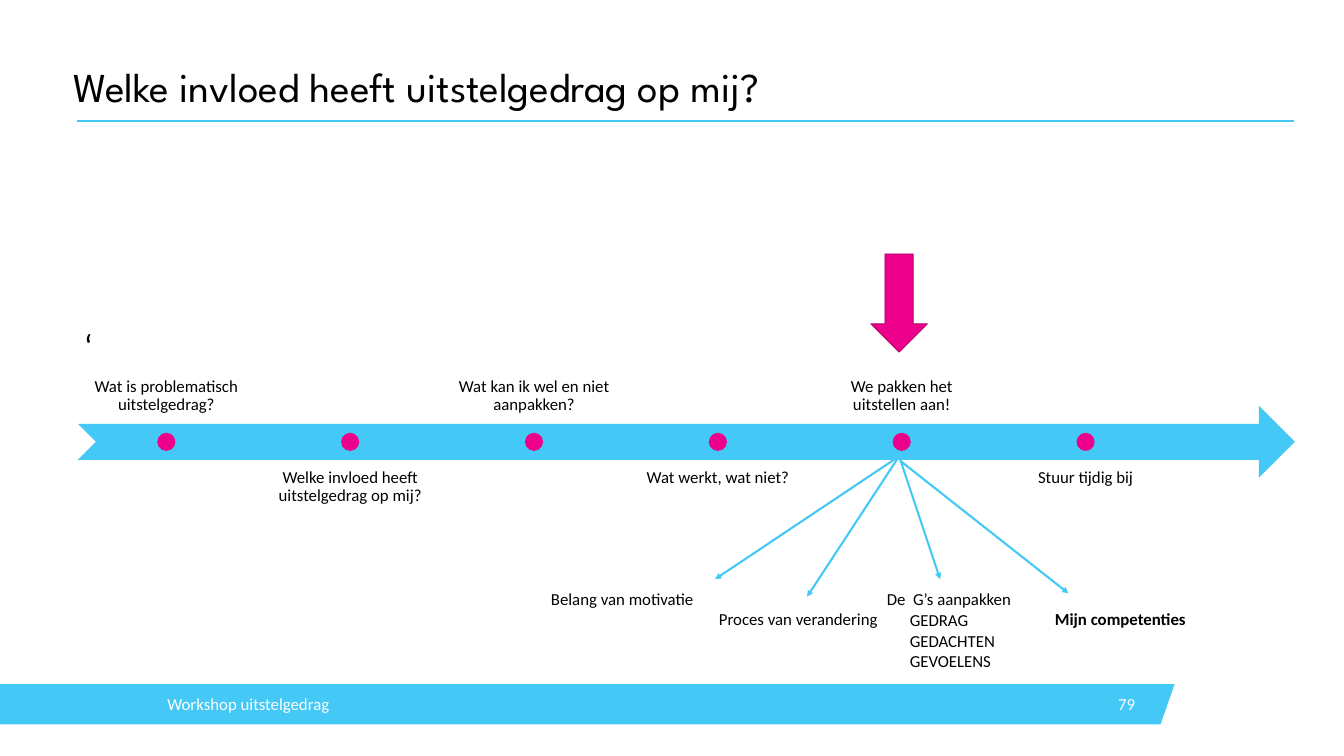
from lxml import etree
from pptx import Presentation
from pptx.dml.color import RGBColor
from pptx.enum.shapes import MSO_CONNECTOR, MSO_SHAPE
from pptx.enum.text import MSO_ANCHOR, MSO_AUTO_SIZE, PP_ALIGN
from pptx.oxml.ns import qn
from pptx.util import Inches, Pt

STRAIGHT = MSO_CONNECTOR.STRAIGHT
TOP, MIDDLE, BOTTOM = MSO_ANCHOR.TOP, MSO_ANCHOR.MIDDLE, MSO_ANCHOR.BOTTOM
LEFT, CENTER, RIGHT = PP_ALIGN.LEFT, PP_ALIGN.CENTER, PP_ALIGN.RIGHT
BLUE, PINK, DARK_PINK = "44C8F5", "EC008C", "AF0068"
BLACK, WHITE = "000000", "FFFFFF"


def color(value):
    return RGBColor.from_string(value)


def fill_text(shape, lines, size=18, ink=BLACK, align=LEFT, anchor=TOP,
              inset=(0.1, 0.05), spacing=None, font="Calibri"):
    frame = shape.text_frame
    frame.word_wrap = True
    frame.auto_size = MSO_AUTO_SIZE.NONE
    frame.vertical_anchor = anchor
    frame.margin_left = frame.margin_right = Inches(inset[0])
    frame.margin_top = frame.margin_bottom = Inches(inset[1])
    frame.text = "\n".join(lines)
    for paragraph in frame.paragraphs:
        paragraph.alignment = align
        paragraph.space_before = Pt(0)
        paragraph.line_spacing = spacing
        paragraph.font.name = font
        paragraph.font.size = Pt(size)
        paragraph.font.color.rgb = color(ink)
    return frame


presentation = Presentation()
presentation.slide_width = Inches(20)
presentation.slide_height = Inches(11.25)
slide = presentation.slides.add_slide(presentation.slide_layouts[1])
shapes = slide.shapes

builder = shapes.build_freeform(Inches(0), Inches(10.18), scale=1.0)
builder.add_line_segments([(Inches(x), Inches(y)) for x, y in
                           [(17.48, 10.18), (17.27, 10.78), (0, 10.78)]])
footer_band = builder.convert_to_shape()
footer_band.shadow.inherit = False
footer_band.fill.solid()
footer_band.fill.fore_color.rgb = color(BLUE)
footer_band.line.fill.background()

title = shapes.title
title.left, title.top, title.width, title.height = map(Inches, (1.09, 0.97, 18.13, 0.69))
fill_text(title, ["Welke invloed heeft uitstelgedrag op mij?"], size=44, anchor=BOTTOM,
          inset=(0, 0), spacing=0.9, font="League Spartan")

body = slide.placeholders[1]
body.left, body.top, body.width, body.height = map(Inches, (1.15, 4.85, 18.13, 4.4))
body_frame = fill_text(body, ["‘"], size=36, spacing=0.9)
body_properties = body_frame.paragraphs[0]._p.get_or_add_pPr()
body_properties.set("marL", "0")
body_properties.set("indent", "0")
bullet_none = etree.Element(qn("a:buNone"))
body_properties.find(qn("a:defRPr")).addprevious(bullet_none)

footer = shapes.add_textbox(Inches(2.49), Inches(10.18), Inches(6.75), Inches(0.6))
fill_text(footer, ["Workshop uitstelgedrag"], ink=WHITE, anchor=MIDDLE, inset=(0, 0))
page_number = shapes.add_textbox(Inches(15.9), Inches(10.18), Inches(1.09), Inches(0.6))
fill_text(page_number, ["79"], ink=WHITE, align=RIGHT, anchor=MIDDLE)

steps = ["Wat is problematisch uitstelgedrag?",
         "Welke invloed heeft uitstelgedrag op mij?",
         "Wat kan ik wel en niet aanpakken?",
         "Wat werkt, wat niet?",
         "We pakken het uitstellen aan!",
         "Stuur tijdig bij"]
step_pitch = 13.68 / 5
markers = [(MSO_SHAPE.NOTCHED_RIGHT_ARROW, 1.16, 6.04, 18.11, 1.07, BLUE, None)]
markers += [(MSO_SHAPE.OVAL, 2.34 + step_pitch * index, 6.44, 0.27, 0.27, PINK, None)
            for index in range(len(steps))]
markers.append((MSO_SHAPE.DOWN_ARROW, 12.96, 3.78, 0.84, 1.46, PINK, DARK_PINK))
for kind, left, top, width, height, fill, outline in markers:
    marker = shapes.add_shape(kind, Inches(left), Inches(top), Inches(width), Inches(height))
    marker.shadow.inherit = False
    marker.fill.solid()
    marker.fill.fore_color.rgb = color(fill)
    if outline:
        marker.line.color.rgb = color(outline)
        marker.line.width = Pt(1)
    else:
        marker.line.fill.background()

for index, step in enumerate(steps):
    above = index % 2 == 0
    label = shapes.add_textbox(Inches(1.17 + step_pitch * index), Inches(5.24 if above else 6.84),
                               Inches(2.61), Inches(1.07))
    fill_text(label, [step], align=CENTER, anchor=BOTTOM if above else TOP,
              inset=(0.14, 0.14), spacing=0.9)

lines = [(1.14, 1.8, 19.25, 1.8, False),
         (13.38, 6.79, 10.64, 8.62, True),
         (13.38, 6.79, 12.01, 8.88, True),
         (13.38, 6.79, 13.99, 8.62, True),
         (13.4, 6.86, 15.9, 8.83, True)]
for start_x, start_y, end_x, end_y, has_arrowhead in lines:
    connector = shapes.add_connector(STRAIGHT, Inches(start_x), Inches(start_y),
                                     Inches(end_x), Inches(end_y))
    connector.line.color.rgb = color(BLUE)
    connector.line.width = Pt(2.25)
    if has_arrowhead:
        etree.SubElement(connector.line._get_or_add_ln(), qn("a:tailEnd"), type="triangle")
    etree.SubElement(connector._element.spPr, qn("a:effectLst"))

topics = shapes.add_textbox(Inches(6.6), Inches(8.71), Inches(11.74), Inches(0.71))
topic_rows = [("Belang van motivatie", "De  G’s aanpakken"),
              ("Proces van verandering", "Mijn competenties")]
topics_frame = fill_text(topics, ["\t" + "\t".join(row) for row in topic_rows])
for paragraph, stops in zip(topics_frame.paragraphs, [(1.5, 6.5), (4, 9)]):
    tab_list = etree.Element(qn("a:tabLst"))
    for stop in stops:
        etree.SubElement(tab_list, qn("a:tab"), pos=str(Inches(stop)), algn="l")
    paragraph._p.pPr.find(qn("a:defRPr")).addprevious(tab_list)
second_row = topics_frame.paragraphs[1]
second_row.runs[0].text = "\tProces van verandering\t"
bold_run = second_row.add_run()
bold_run.text = "Mijn competenties"
bold_run.font.bold = True

g_list = shapes.add_textbox(Inches(13.44), Inches(9.03), Inches(7.7 - 1.2), Inches(1.01))
fill_text(g_list, ["GEDRAG", "GEDACHTEN", "GEVOELENS"])

presentation.save("out.pptx")
